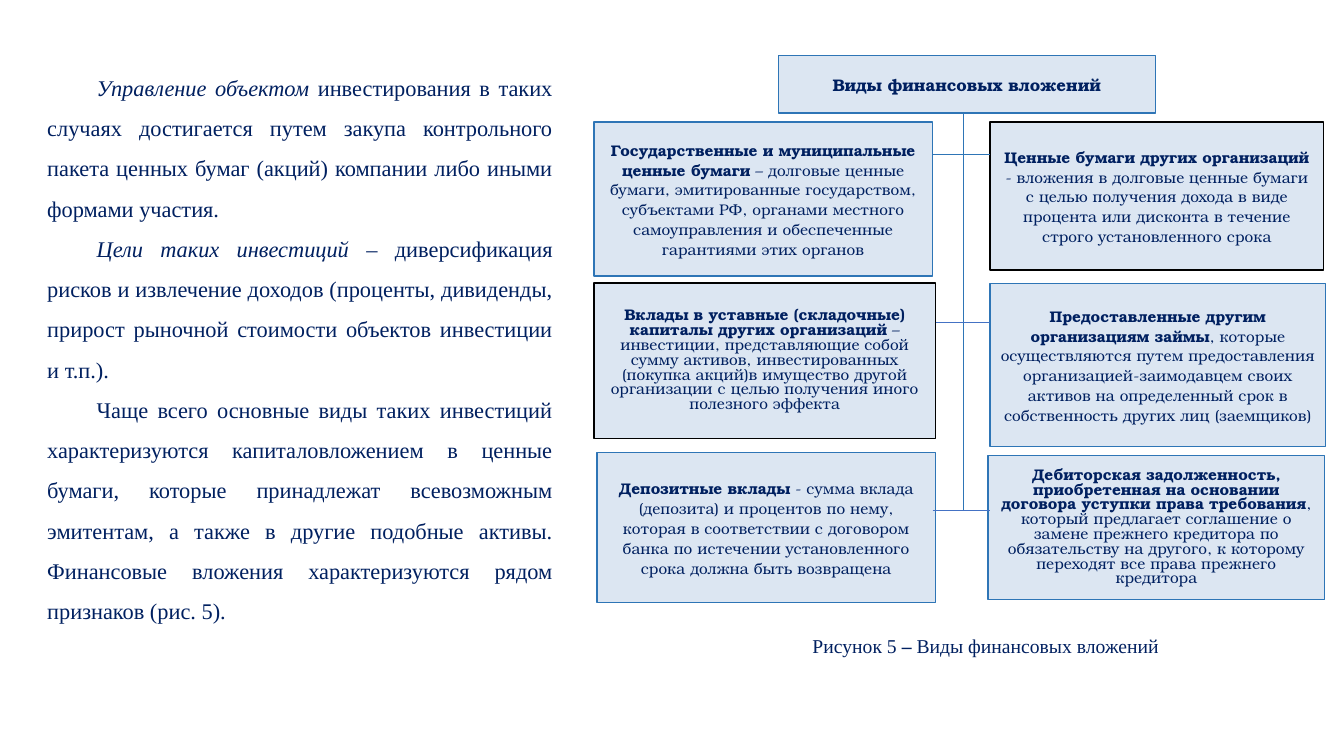
from pptx import Presentation
from pptx.dml.color import RGBColor
from pptx.enum import shapes, text
from pptx.oxml import xmlchemy
from pptx.oxml.ns import qn
from pptx.util import Inches, Pt
from lxml import etree

NAVY = RGBColor(0x00, 0x20, 0x60)
PALE = RGBColor(0xDC, 0xE6, 0xF2)
BLUE = RGBColor(0x2E, 0x75, 0xB6)
INDIGO = RGBColor(0x44, 0x72, 0xC4)
BLACK = RGBColor(0x00, 0x00, 0x00)
SERIF = "Times New Roman"
BOOK = "TeX Gyre Bonum"
CENTER = text.PP_ALIGN.CENTER

# Each paragraph: italic lead, then plain text
BODY = [
    ("Управление объектом ", "инвестирования в таких случаях достигается путем закупа "
     "контрольного пакета ценных бумаг (акций) компании либо иными формами участия. "),
    ("Цели таких инвестиций ", "– диверсификация рисков и извлечение доходов (проценты, "
     "дивиденды, прирост рыночной стоимости объектов инвестиции и т.п.)."),
    ("", "Чаще всего основные виды таких инвестиций характеризуются капиталовложением в "
     "ценные бумаги, которые принадлежат всевозможным эмитентам, а также в другие подобные "
     "активы. Финансовые вложения характеризуются рядом признаков (рис. 5)."),
]

# Each kind: place, outline, line spacing, bold term, definition
KINDS = [
    ((5.89, 1.21, 3.36, 1.53), BLUE, 1.07, "Государственные и муниципальные ценные бумаги",
     " – долговые ценные бумаги, эмитированные государством, субъектами РФ, органами "
     "местного самоуправления и обеспеченные гарантиями этих органов"),
    ((5.92, 4.49, 3.36, 1.49), BLUE, 1.07, "Депозитные вклады",
     " - сумма вклада (депозита) и процентов по нему, которая в соответствии с договором "
     "банка по истечении установленного срока должна быть возвращена"),
    ((9.82, 2.81, 3.33, 1.62), BLUE, 1.07, "Предоставленные другим организациям займы",
     ", которые осуществляются путем предоставления организацией-заимодавцем своих активов "
     "на определенный срок в собственность других лиц (заемщиков)"),
    ((5.89, 2.81, 3.39, 1.54), BLACK, 0.8,
     "Вклады в уставные (складочные) капиталы других организаций",
     " – инвестиции, представляющие собой сумму активов, инвестированных (покупка акций)в "
     "имущество другой организации с целью получения иного полезного эффекта"),
    ((9.8, 4.52, 3.34, 1.43), BLUE, 0.8,
     "Дебиторская задолженность, приобретенная на основании договора уступки права требования",
     ", который предлагает соглашение о замене прежнего кредитора по обязательству на "
     "другого, к которому переходят все права прежнего кредитора"),
    ((9.82, 1.21, 3.31, 1.47), BLACK, 1.07, "Ценные бумаги других организаций",
     " - вложения в долговые ценные бумаги с целью получения дохода в виде процента или "
     "дисконта в течение строго установленного срока"),
]

TRUNK_X = 9.55
BRANCHES = [(9.25, 1.53, BLUE), (9.28, 3.2, INDIGO), (9.25, 5.06, INDIGO)]


def add_span(para, words, font=SERIF, size=16, bold=False, italic=False):
    span = para.add_run()
    span.text = words
    span.font.name = font
    span.font.size = Pt(size)
    span.font.bold = bold
    span.font.italic = italic
    span.font.color.rgb = NAVY


def add_text_box(page, place, wrap=True):
    frame = page.shapes.add_textbox(*map(Inches, place)).text_frame
    frame.word_wrap = wrap
    return frame


def add_kind_box(page, place, outline, spacing, term, definition="", size=11):
    box = page.shapes.add_shape(shapes.MSO_SHAPE.RECTANGLE, *map(Inches, place))
    box.shadow.inherit = False
    box.fill.solid()
    box.fill.fore_color.rgb = PALE
    box.line.color.rgb = outline
    box.line.width = Pt(1)
    frame = box.text_frame
    frame.word_wrap = True
    frame.vertical_anchor = text.MSO_ANCHOR.MIDDLE
    para = frame.paragraphs[0]
    para.alignment = CENTER
    para.line_spacing = spacing
    para.space_after = Pt(8)
    add_span(para, term, BOOK, size, bold=True)
    if definition:
        add_span(para, definition, BOOK, size)


def add_line(page, start, end, color):
    line = page.shapes.add_connector(
        shapes.MSO_CONNECTOR.STRAIGHT, *map(Inches, start + end))
    line.line.color.rgb = color
    line.line.width = Pt(0.5)
    etree.SubElement(line._element.spPr, qn("a:effectLst"))


def add_body(page):
    frame = add_text_box(page, (0.37, 0.55, 5.21, 5.71))
    for index, (lead, rest) in enumerate(BODY):
        para = frame.add_paragraph() if index else frame.paragraphs[0]
        para.alignment = text.PP_ALIGN.JUSTIFY
        para.line_spacing = 1.5
        para._p.get_or_add_pPr().set("indent", str(Inches(0.49)))
        if lead:
            add_span(para, lead, italic=True)
        add_span(para, rest)


def add_caption(page):
    para = add_text_box(page, (7.96, 6.24, 3.68, 0.34), wrap=False).paragraphs[0]
    add_span(para, "Рисунок 5", size=14)
    add_span(para, " – ", size=14, bold=True)
    add_span(para, "Виды финансовых вложений", size=14)


def main():
    deck = Presentation()
    deck.slide_width, deck.slide_height = Inches(13.33), Inches(7.5)
    page = deck.slides.add_slide(deck.slide_layouts[6])

    # Left column
    add_body(page)

    # Diagram: heading and six kinds
    add_kind_box(page, (7.72, 0.55, 3.74, 0.57), BLUE, 1.07,
                 "Виды финансовых вложений", size=12)
    for kind in KINDS:
        add_kind_box(page, *kind)

    # Trunk and branches
    add_line(page, (TRUNK_X, 1.12), (TRUNK_X, 5.06), BLUE)
    for left, level, color in BRANCHES:
        add_line(page, (left, level), (9.82, level), color)

    add_caption(page)
    deck.save("out.pptx")


if __name__ == "__main__":
    main()
